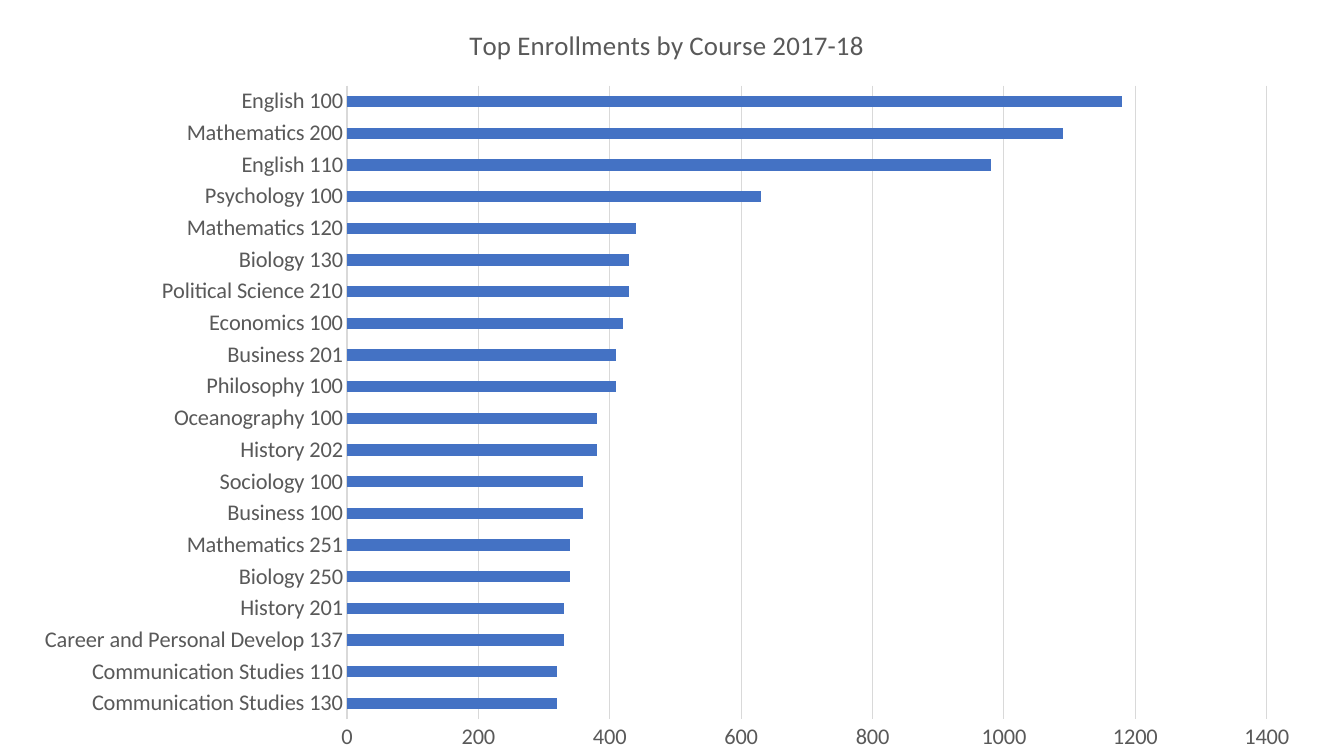
from pptx import Presentation
from pptx.chart.data import CategoryChartData
from pptx.dml.color import RGBColor
from pptx.enum.chart import XL_CHART_TYPE, XL_TICK_MARK
from pptx.util import Cm, Pt

BAR_CLUSTERED = XL_CHART_TYPE.BAR_CLUSTERED
NO_TICK = XL_TICK_MARK.NONE

ENROLLMENTS = {
    "Communication Studies 130": 320,
    "Communication Studies 110": 320,
    "Career and Personal Develop 137": 330,
    "History 201": 330,
    "Biology 250": 340,
    "Mathematics 251": 340,
    "Business 100": 360,
    "Sociology 100": 360,
    "History 202": 380,
    "Oceanography 100": 380,
    "Philosophy 100": 410,
    "Business 201": 410,
    "Economics 100": 420,
    "Political Science 210": 430,
    "Biology 130": 430,
    "Mathematics 120": 440,
    "Psychology 100": 630,
    "English 110": 980,
    "Mathematics 200": 1090,
    "English 100": 1180,
}


def color(hex_string):
    return RGBColor.from_string(hex_string)


def format_font(font, size, fill, name, bold=False):
    font.size = Pt(size)
    font.color.rgb = color(fill)
    font.name = name
    font.bold = bold


def write_text(frame, text, **style):
    paragraph = frame.paragraphs[0]
    span = paragraph.add_run()
    span.text = text
    format_font(span.font, **style)


class EnrollmentPage:
    font = "Calibri"
    text_color = "595959"
    rule_color = "D9D9D9"
    bar_color = "4472C4"
    label_size = 16
    title_size = 19.2

    def __init__(self, deck):
        self.page = deck.slides.add_slide(deck.slide_layouts[6])

    def text_style(self, size):
        return {"size": size, "fill": self.text_color, "name": self.font}

    def draw_rule(self, line):
        line.color.rgb = color(self.rule_color)
        line.width = Pt(0.75)

    def style_axis(self, axis):
        axis.major_tick_mark = NO_TICK
        axis.minor_tick_mark = NO_TICK
        format_font(axis.tick_labels.font, **self.text_style(self.label_size))

    def bar_chart(self, title, values, left, top, width, height):
        data = CategoryChartData()
        data.categories = list(values)
        data.add_series("Series 1", list(values.values()))
        chart = self.page.shapes.add_chart(
            BAR_CLUSTERED, Cm(left), Cm(top), Cm(width), Cm(height), data
        ).chart
        format_font(chart.font, **self.text_style(self.label_size))
        chart.has_legend = False
        chart.has_title = True
        chart.chart_title.include_in_layout = False
        write_text(
            chart.chart_title.text_frame, title, **self.text_style(self.title_size)
        )

        courses = chart.category_axis
        self.style_axis(courses)
        courses.has_major_gridlines = False
        self.draw_rule(courses.format.line)

        counts = chart.value_axis
        self.style_axis(counts)
        counts.minimum_scale = 0
        counts.maximum_scale = 1400
        counts.major_unit = 200
        counts.has_major_gridlines = True
        self.draw_rule(counts.major_gridlines.format.line)
        counts.format.line.fill.background()

        plot = chart.plots[0]
        plot.gap_width = 182
        plot.vary_by_categories = False
        bars = plot.series[0]
        bars.invert_if_negative = False
        bars.format.fill.solid()
        bars.format.fill.fore_color.rgb = color(self.bar_color)


def main():
    deck = Presentation()
    deck.slide_width = Cm(33.87)
    deck.slide_height = Cm(19.05)
    page = EnrollmentPage(deck)
    page.bar_chart(
        "Top Enrollments by Course 2017-18",
        ENROLLMENTS,
        left=0.48,
        top=0,
        width=32.66,
        height=19.3,
    )
    deck.save("out.pptx")


if __name__ == "__main__":
    main()
